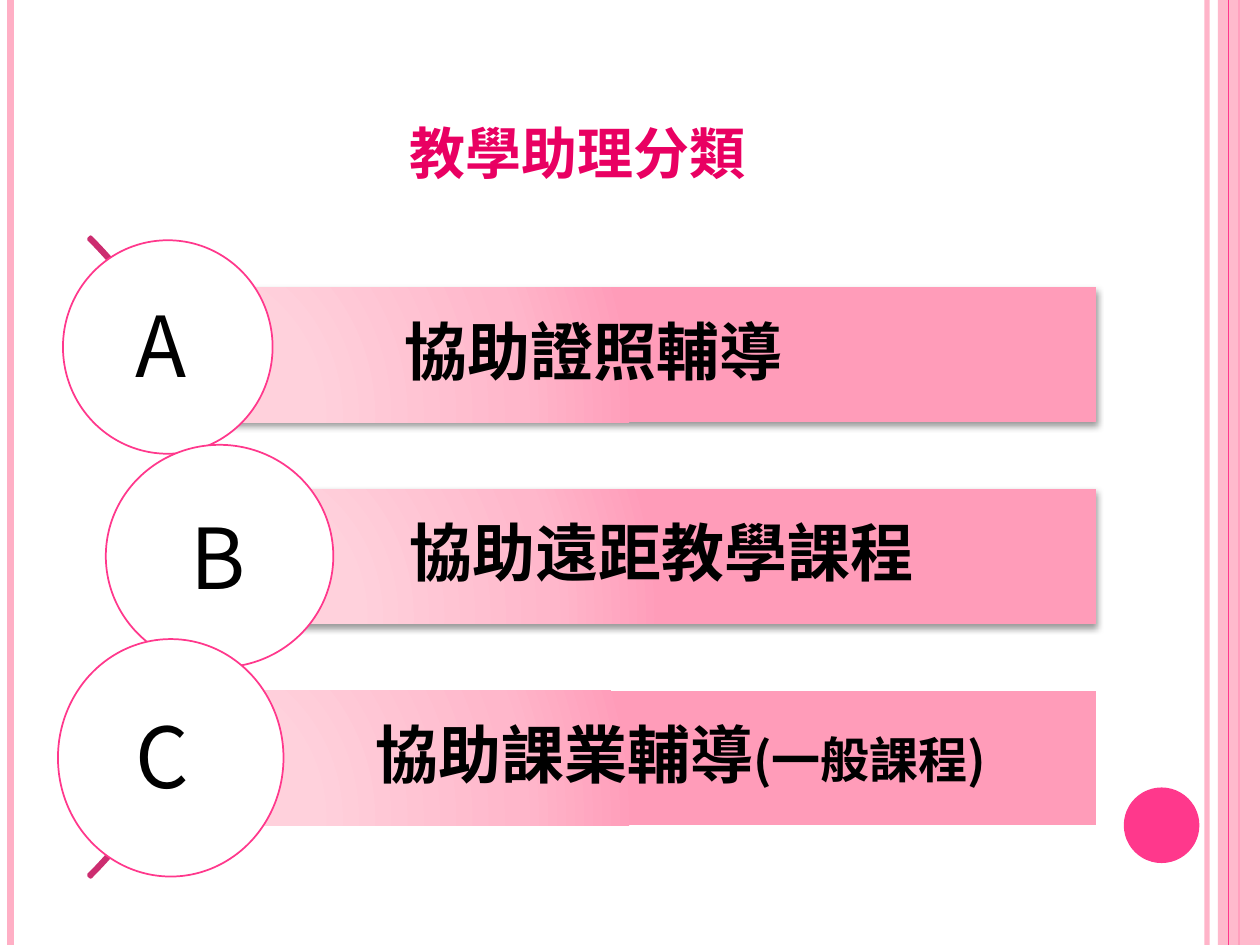
from dataclasses import dataclass

from lxml import etree
from pptx import Presentation
from pptx.dml.color import RGBColor
from pptx.enum.shapes import MSO_CONNECTOR, MSO_SHAPE
from pptx.enum.text import MSO_ANCHOR, PP_ALIGN
from pptx.oxml import parse_xml
from pptx.oxml.ns import nsdecls, qn
from pptx.util import Pt

STRAIGHT = MSO_CONNECTOR.STRAIGHT
RECTANGLE, OVAL, ARC = MSO_SHAPE.RECTANGLE, MSO_SHAPE.OVAL, MSO_SHAPE.BLOCK_ARC
LEFT, CENTER = PP_ALIGN.LEFT, PP_ALIGN.CENTER
TOP, MIDDLE, BOTTOM = MSO_ANCHOR.TOP, MSO_ANCHOR.MIDDLE, MSO_ANCHOR.BOTTOM


@dataclass(frozen=True)
class Theme:
    font: str = "Noto Sans CJK SC"
    title: str = "E90062"
    ink: str = "000000"
    paper: str = "FFFFFF"
    accent: str = "FF388C"
    pale: str = "FFAFC5"
    arc: str = "CC2D70"
    bar_stops: tuple = ((0, "FFD5DF"), (30, "FFD1DC"), (75, "FFB7CB"), (100, "FF9CB9"))
    title_size: int = 40
    bar_size: int = 36
    note_size: int = 28
    letter_size: int = 48


class SlideBuilder:
    def __init__(self, slide, theme):
        self.slide = slide
        self.theme = theme

    def set_values(self, target, values):
        for name, value in values.items():
            setattr(target, name, value)

    def fade(self, fill_owner, percent):
        color = next(fill_owner.iter(qn("a:srgbClr")))
        etree.SubElement(color, qn("a:alpha")).set("val", str(percent * 1000))

    def put_text(self, shape, runs, color, bold=False, align=LEFT, **frame_values):
        frame = shape.text_frame
        self.set_values(frame, frame_values)
        paragraph = frame.paragraphs[0]
        paragraph.alignment = align
        for text, size in runs:
            run = paragraph.add_run()
            run.text = text
            self.set_values(run.font, {"name": self.theme.font, "size": Pt(size), "bold": bold})
            run.font.color.rgb = RGBColor.from_string(color)
            east_asian = etree.SubElement(run._r.get_or_add_rPr(), qn("a:ea"))
            east_asian.set("typeface", self.theme.font)
        return paragraph

    def title(self, text, box):
        heading = self.slide.shapes.title
        self.set_values(heading, dict(zip(("left", "top", "width", "height"), map(Pt, box))))
        paragraph = self.put_text(heading, [(text, self.theme.title_size)], self.theme.title,
                                  True, CENTER, vertical_anchor=BOTTOM, word_wrap=True)
        paragraph.runs[0]._r.get_or_add_rPr().set("cap", "small")

    def stripe(self, x, color, width, opacity=100):
        stripe = self.slide.shapes.add_connector(STRAIGHT, Pt(x), Pt(0), Pt(x), Pt(540))
        stripe.line.color.rgb = RGBColor.from_string(color)
        stripe.line.width = Pt(width)
        properties = stripe._element.spPr
        etree.SubElement(properties, qn("a:effectLst"))
        if opacity < 100:
            self.fade(properties, opacity)

    def shape(self, kind, box, fill=None, line=None, line_width=1, opacity=100):
        shape = self.slide.shapes.add_shape(kind, *map(Pt, box))
        shape.shadow.inherit = False
        if fill:
            shape.fill.solid()
            shape.fill.fore_color.rgb = RGBColor.from_string(fill)
        else:
            shape.fill.background()
        if opacity < 100:
            self.fade(shape._element.spPr, opacity)
        if line:
            shape.line.color.rgb = RGBColor.from_string(line)
            shape.line.width = Pt(line_width)
        else:
            shape.line.fill.background()
        return shape

    def arc(self, box, adjustments):
        arc = self.shape(ARC, box, line=self.theme.arc, line_width=2)
        for index, value in enumerate(adjustments):
            arc.adjustments[index] = value

    def bar(self, box, runs, indent, align):
        bar = self.shape(RECTANGLE, box)
        properties = bar._element.spPr
        stops = "".join(
            f'<a:gs pos="{position * 1000}"><a:srgbClr val="{color}"/></a:gs>'
            for position, color in self.theme.bar_stops)
        gradient = parse_xml(
            f'<a:gradFill {nsdecls("a")} rotWithShape="1"><a:gsLst>{stops}</a:gsLst>'
            '<a:path path="circle"><a:fillToRect l="5000" t="100000" r="120000" b="10000"/>'
            '</a:path></a:gradFill>')
        properties.replace(properties.find(qn("a:noFill")), gradient)
        properties.find(qn("a:effectLst")).append(parse_xml(
            f'<a:outerShdw {nsdecls("a")} blurRad="{Pt(4)}" dist="{Pt(2)}" dir="5400000" '
            f'rotWithShape="0"><a:srgbClr val="{self.theme.ink}"><a:alpha val="40000"/>'
            '</a:srgbClr></a:outerShdw>'))
        paragraph = self.put_text(
            bar, runs, self.theme.ink, True, align, vertical_anchor=MIDDLE, word_wrap=True,
            margin_left=Pt(indent), margin_right=Pt(7.2),
            margin_top=Pt(7.2), margin_bottom=Pt(7.2))
        paragraph.line_spacing = 0.9

    def letter(self, text, box):
        label = self.slide.shapes.add_textbox(*map(Pt, box))
        self.put_text(label, [(text, self.theme.letter_size)], self.theme.ink,
                      vertical_anchor=TOP, word_wrap=False)


def main():
    theme = Theme()
    presentation = Presentation()
    presentation.slide_width, presentation.slide_height = Pt(720), Pt(540)
    page = SlideBuilder(presentation.slides.add_slide(presentation.slide_layouts[5]), theme)

    page.stripe(689.8, theme.pale, 3, 93)
    page.stripe(6, theme.pale, 4.5)
    page.stripe(708, theme.accent, 1.5)
    page.shape(RECTANGLE, (696, 0, 24, 540), theme.pale, opacity=87)
    page.stripe(702, theme.accent, 0.75)
    page.shape(OVAL, (642.2, 450, 43.2, 43.2), theme.accent)
    page.title("教學助理分類", (36, 21.6, 588, 90))
    page.arc((-389.5, 59.8, 517, 517), (189, 27, 0.003))

    bar_right, bar_top, bar_pitch, bar_height = 626.6, 164.3, 115.2, 77
    categories = [
        ("A", [("協助證照輔導", theme.bar_size)], 97.2, 134, LEFT,
         (36, 137.3, 119.8, 122), (70.6, 164.2, 48.2, 65.5)),
        ("B", [("協助遠距教學課程", theme.bar_size)], 125.3, 109, LEFT,
         (60.5, 254.2, 130, 127.2), (101.5, 285.1, 44.6, 65.5)),
        ("C", [("協助課業輔導", theme.bar_size), ("(一般課程)", theme.note_size)], 97.2, 61, CENTER,
         (33.1, 365.2, 128.9, 135.7), (70.6, 398.9, 46.8, 65.5)),
    ]
    for row, (_, runs, left, indent, align, circle, _) in enumerate(categories):
        page.bar((left, bar_top + row * bar_pitch, bar_right - left, bar_height),
                 runs, indent, align)
        page.shape(OVAL, circle, theme.paper, theme.accent)
    for letter, *_, letter_box in categories:
        page.letter(letter, letter_box)

    presentation.save("out.pptx")


if __name__ == "__main__":
    main()
